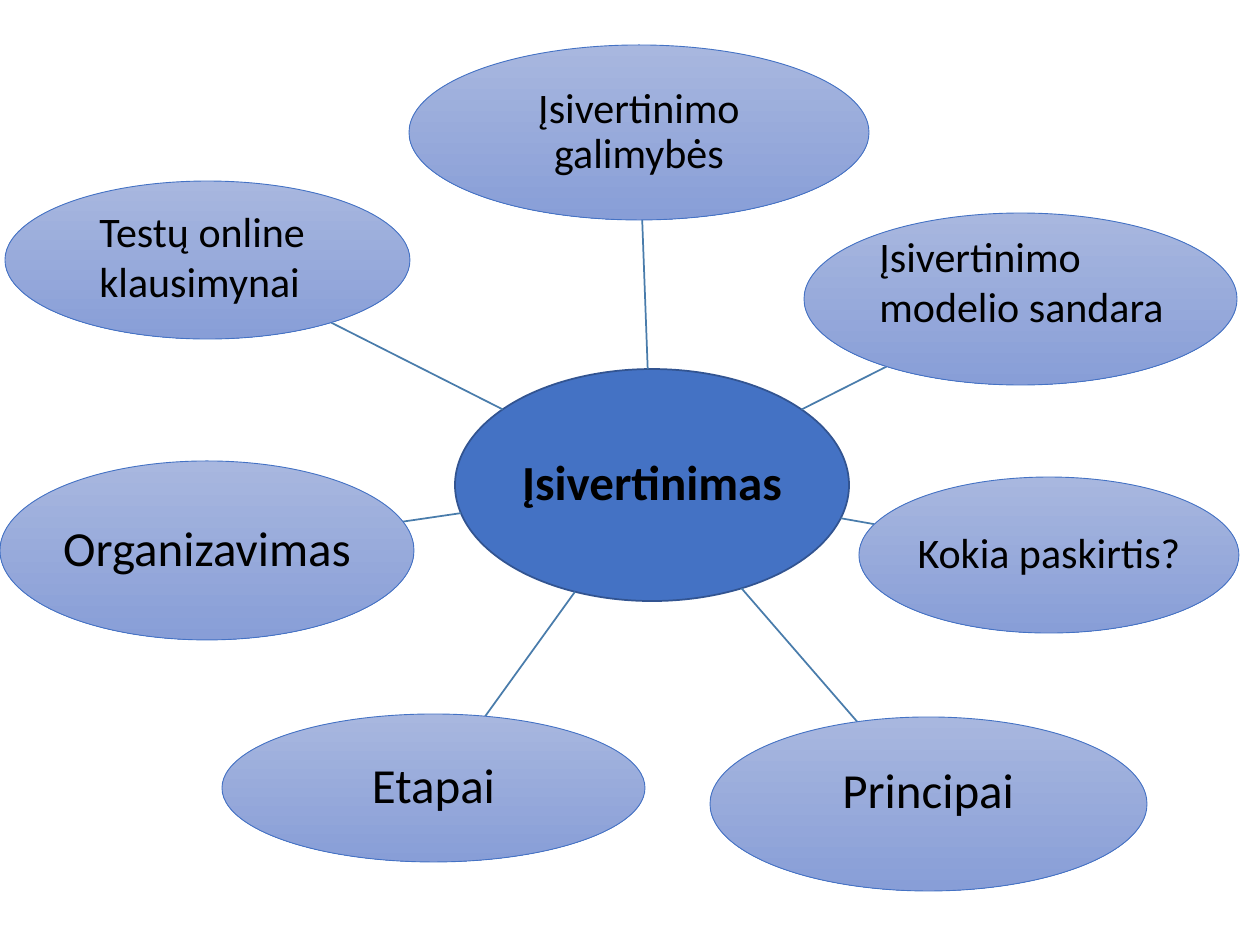
from math import hypot

from pptx import Presentation
from pptx.dml.color import RGBColor
from pptx.enum.shapes import MSO_CONNECTOR, MSO_SHAPE
from pptx.enum.text import MSO_ANCHOR, MSO_AUTO_SIZE, PP_ALIGN
from pptx.oxml.xmlchemy import OxmlElement
from pptx.util import Pt

PX = 914400 / 126
COLORS = {
    "hub": "4472C4", "hub_line": "325491", "spoke": "497CAB", "text": "000000",
    "topic_top": "A8B7DF", "topic_bottom": "889ED7", "topic_line": "4472C4",
}
HUB = (455, 369, 394, 232)
# ellipse box, centred label, label size
TOPICS = [
    ((409, 45, 460, 175), "Įsivertinimo galimybės", 24),
    ((804, 213, 433, 172), None, None),
    ((859, 477, 380, 156), "Kokia paskirtis?", 24),
    ((710, 717, 437, 174), None, None),
    ((222, 714, 423, 148), "Etapai", 28),
    ((0, 461, 414, 179), "Organizavimas", 28),
    ((5, 181, 405, 158), None, None),
]
# text box, lines, size, wrap
LABELS = [
    ((867, 224, 381, 115), ["Įsivertinimo", "modelio sandara"], 24, True),
    ((830, 753, 199, 72), ["Principai"], 28, False),
    ((87, 199, 305, 115), ["Testų online", "klausimynai"], 24, True),
]


def emu(*lengths):
    return [round(n * PX) for n in lengths]


def rgb(name):
    return RGBColor.from_string(COLORS[name])


def set_attrs(obj, **values):
    for name, value in values.items():
        setattr(obj, name, value)


def write(p, text, size, bold=False):
    r = p.add_run()
    r.text = text
    set_attrs(r.font, name="Calibri", size=Pt(size), bold=bold)
    r.font.color.rgb = rgb("text")


def add_ellipse(s, box, line, width, text=None, size=None, bold=False):
    sp = s.shapes.add_shape(MSO_SHAPE.OVAL, *emu(*box))
    sp.shadow.inherit = False
    sp.line.color.rgb = rgb(line)
    sp.line.width = Pt(width)
    if text:
        tf = sp.text_frame
        margins = dict.fromkeys(
            ("margin_left", "margin_top", "margin_right", "margin_bottom"), emu(2)[0])
        set_attrs(tf, word_wrap=True, vertical_anchor=MSO_ANCHOR.MIDDLE, **margins)
        p = tf.paragraphs[0]
        set_attrs(p, alignment=PP_ALIGN.CENTER, line_spacing=0.9)
        write(p, text, size, bold)
    return sp


def add_hub(s):
    sp = add_ellipse(s, HUB, "hub_line", 1, "Įsivertinimas", 28, True)
    sp.fill.solid()
    sp.fill.fore_color.rgb = rgb("hub")


def add_topic(s, box, text, size):
    sp = add_ellipse(s, box, "topic_line", 0.5, text, size)
    sp.fill.gradient()
    sp.fill.gradient_angle = 270
    for stop, name in zip(sp.fill.gradient_stops, ("topic_top", "topic_bottom")):
        stop.color.rgb = rgb(name)


def center(box):
    x, y, w, h = box
    return x + w / 2, y + h / 2


def edge_point(box, target):
    """Where the line from the ellipse's centre to target leaves the ellipse."""
    (cx, cy), (tx, ty) = center(box), center(target)
    dx, dy = tx - cx, ty - cy
    t = 1 / hypot(2 * dx / box[2], 2 * dy / box[3])
    return cx + t * dx, cy + t * dy


def add_spoke(s, box):
    ends = edge_point(HUB, box) + edge_point(box, HUB)
    line = s.shapes.add_connector(MSO_CONNECTOR.STRAIGHT, *emu(*ends))
    line.line.color.rgb = rgb("spoke")
    line.line.width = Pt(1)
    line._element.spPr.append(OxmlElement("a:effectLst"))


def add_label(s, box, lines, size, wrap):
    tf = s.shapes.add_textbox(*emu(*box)).text_frame
    set_attrs(tf, word_wrap=wrap, auto_size=MSO_AUTO_SIZE.SHAPE_TO_FIT_TEXT)
    for i, text in enumerate(lines):
        write(tf.add_paragraph() if i else tf.paragraphs[0], text, size)


def main():
    prs = Presentation()
    prs.slide_width, prs.slide_height = emu(1260, 945)
    s = prs.slides.add_slide(prs.slide_layouts[6])
    add_hub(s)
    for box, text, size in TOPICS:
        add_spoke(s, box)
        add_topic(s, box, text, size)
    for label in LABELS:
        add_label(s, *label)
    prs.save("out.pptx")


if __name__ == "__main__":
    main()
